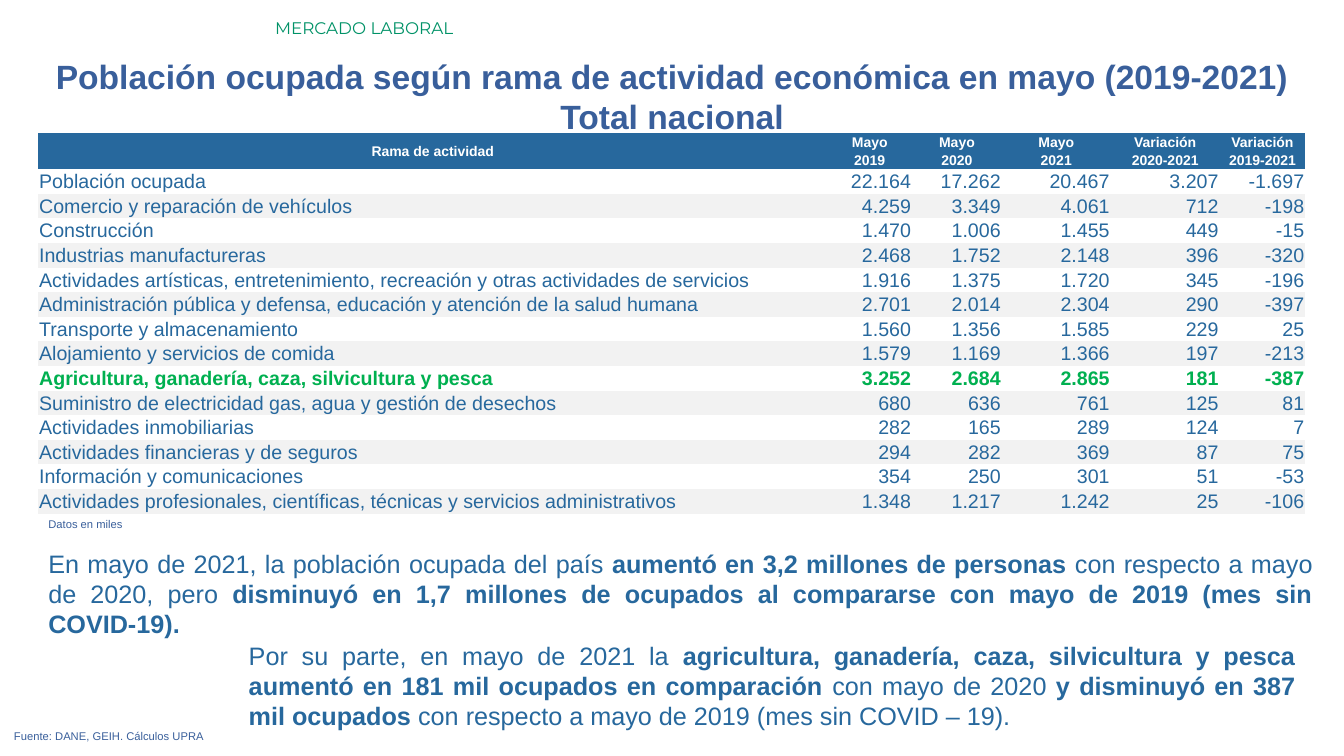
"""Build the slide on employed population by branch of activity."""
from pptx import Presentation
from pptx.dml.color import RGBColor
from pptx.enum.text import MSO_ANCHOR as Anchor, MSO_AUTO_SIZE as AutoSize, PP_ALIGN as Align
from pptx.util import Pt

COLORS = {"navy": "395F9B", "blue": "27689D", "section": "009267",
          "highlight": "00B050", "band": "F2F2F2", "white": "FFFFFF"}
TITLE = ["Población ocupada según rama de actividad económica en mayo (2019-2021)",
         "Total nacional"]
HEADERS = [("Rama de actividad", ""), ("Mayo", "2019"), ("Mayo", "2020"), ("Mayo", "2021"),
           ("Variación", "2020-2021"), ("Variación", "2019-2021")]
HIGHLIGHTED = "Agricultura, ganadería, caza, silvicultura y pesca"
BRANCHES = [
    ("Población ocupada", "22.164", "17.262", "20.467", "3.207", "-1.697"),
    ("Comercio y reparación de vehículos", "4.259", "3.349", "4.061", "712", "-198"),
    ("Construcción", "1.470", "1.006", "1.455", "449", "-15"),
    ("Industrias manufactureras", "2.468", "1.752", "2.148", "396", "-320"),
    ("Actividades artísticas, entretenimiento, recreación y otras actividades de servicios",
     "1.916", "1.375", "1.720", "345", "-196"),
    ("Administración pública y defensa, educación y atención de la salud humana",
     "2.701", "2.014", "2.304", "290", "-397"),
    ("Transporte y almacenamiento", "1.560", "1.356", "1.585", "229", "25"),
    ("Alojamiento y servicios de comida", "1.579", "1.169", "1.366", "197", "-213"),
    (HIGHLIGHTED, "3.252", "2.684", "2.865", "181", "-387"),
    ("Suministro de electricidad gas, agua y gestión de desechos",
     "680", "636", "761", "125", "81"),
    ("Actividades inmobiliarias", "282", "165", "289", "124", "7"),
    ("Actividades financieras y de seguros", "294", "282", "369", "87", "75"),
    ("Información y comunicaciones", "354", "250", "301", "51", "-53"),
    ("Actividades profesionales, científicas, técnicas y servicios administrativos",
     "1.348", "1.217", "1.242", "25", "-106"),
]
TOTAL_COMMENT = [
    ("En mayo de 2021, la población ocupada del país ", False),
    ("aumentó en 3,2 millones de personas ", True),
    ("con respecto a mayo de 2020, pero ", False),
    ("disminuyó en 1,7 millones de ocupados al compararse con mayo de 2019 "
     "(mes sin COVID-19).", True),
]
FARM_COMMENT = [
    ("Por su parte, en mayo de 2021 la", False),
    (" agricultura, ganadería, caza, silvicultura y pesca aumentó en 181 mil ocupados "
     "en comparación ", True),
    ("con mayo de 2020", False),
    (" y disminuyó en 387 mil ocupados ", True),
    ("con respecto a mayo de 2019 (mes sin COVID – 19).", False),
]
TEXT_BOXES = [
    ((189.4, 9.4, 770.4, 21.6), [("MERCADO LABORAL", False)], 12, "section",
     Align.LEFT, "Montserrat"),
    ((27.4, 388, 917.3, 72.7), TOTAL_COMMENT, 18, "blue", Align.JUSTIFY, "Arial"),
    ((170.6, 453.6, 761.8, 72.7), FARM_COMMENT, 18, "blue", Align.JUSTIFY, "Arial"),
    ((27.4, 365.8, 929.5, 17), [("Datos en miles", False)], 8, "navy", Align.JUSTIFY, "Arial"),
    ((2.9, 517.7, 929.5, 17), [("Fuente: DANE, GEIH. Cálculos UPRA", False)], 8, "navy",
     Align.JUSTIFY, "Arial"),
]
TABLE_LEFT, TABLE_TOP = 27.2, 95
COLUMN_WIDTHS = [563.8, 60.5, 64.1, 77.8, 77.8, 61.2]
HEADER_HEIGHT, ROW_HEIGHT = 12.9, 17.6
PLAIN_TABLE_STYLE = "{2D5ABB26-0587-4C30-8999-92F81FD0307C}"


def format_paragraph(paragraph, size, color, alignment, bold=None, font_name="Arial"):
    paragraph.alignment = alignment
    font = paragraph.font
    font.name, font.size, font.bold = font_name, Pt(size), bold
    font.color.rgb = RGBColor.from_string(COLORS[color])


def place(shape, box):
    shape.left, shape.top, shape.width, shape.height = map(Pt, box)


def add_title(slide):
    title = slide.shapes.title
    place(title, (0, 36, 960, 65.5))
    frame = title.text_frame
    frame.text = "\n".join(TITLE)
    frame.word_wrap, frame.auto_size = True, AutoSize.SHAPE_TO_FIT_TEXT
    frame.vertical_anchor = Anchor.TOP
    for paragraph in frame.paragraphs:
        format_paragraph(paragraph, 24, "navy", Align.CENTER, True)


def add_text(slide, box, runs, size, color, alignment, font_name):
    frame = slide.shapes.add_textbox(*map(Pt, box)).text_frame
    frame.word_wrap, frame.auto_size = True, AutoSize.SHAPE_TO_FIT_TEXT
    paragraph = frame.paragraphs[0]
    format_paragraph(paragraph, size, color, alignment, font_name=font_name)
    for text, bold in runs:
        run = paragraph.add_run()
        run.text = text
        if bold:
            run.font.bold = True


def fill_cell(cell, text, size, color, alignment, bold, fill):
    cell.margin_left = cell.margin_right = cell.margin_top = Pt(0.75)
    cell.margin_bottom = 0
    cell.vertical_anchor = Anchor.MIDDLE
    cell.text = text
    format_paragraph(cell.text_frame.paragraphs[0], size, color, alignment, bold)
    if fill:
        cell.fill.solid()
        cell.fill.fore_color.rgb = RGBColor.from_string(COLORS[fill])
    else:
        cell.fill.background()


def add_branch_table(slide):
    heights = [HEADER_HEIGHT] * 2 + [ROW_HEIGHT] * len(BRANCHES)
    table = slide.shapes.add_table(
        len(heights), len(COLUMN_WIDTHS), Pt(TABLE_LEFT), Pt(TABLE_TOP),
        Pt(sum(COLUMN_WIDTHS)), Pt(sum(heights))).table
    table._tbl.tblPr[0].text = PLAIN_TABLE_STYLE
    for column, width in zip(table.columns, COLUMN_WIDTHS):
        column.width = Pt(width)
    for row, height in zip(table.rows, heights):
        row.height = Pt(height)
    for column, lines in enumerate(HEADERS):
        for row, text in enumerate(lines):
            fill_cell(table.cell(row, column), text, 10, "white", Align.CENTER, True, "blue")
    table.cell(0, 0).merge(table.cell(1, 0))
    for index, branch in enumerate(BRANCHES):
        highlighted = branch[0] == HIGHLIGHTED
        color = "highlight" if highlighted else "blue"
        fill = "band" if index % 2 else None
        for column, text in enumerate(branch):
            alignment = Align.RIGHT if column else Align.LEFT
            fill_cell(table.cell(index + 2, column), text, 14, color, alignment,
                      highlighted, fill)


def main():
    presentation = Presentation()
    presentation.slide_width, presentation.slide_height = Pt(960), Pt(540)
    slide = presentation.slides.add_slide(presentation.slide_layouts[5])
    add_title(slide)
    add_branch_table(slide)
    for text_box in TEXT_BOXES:
        add_text(slide, *text_box)
    presentation.save("out.pptx")


if __name__ == "__main__":
    main()
